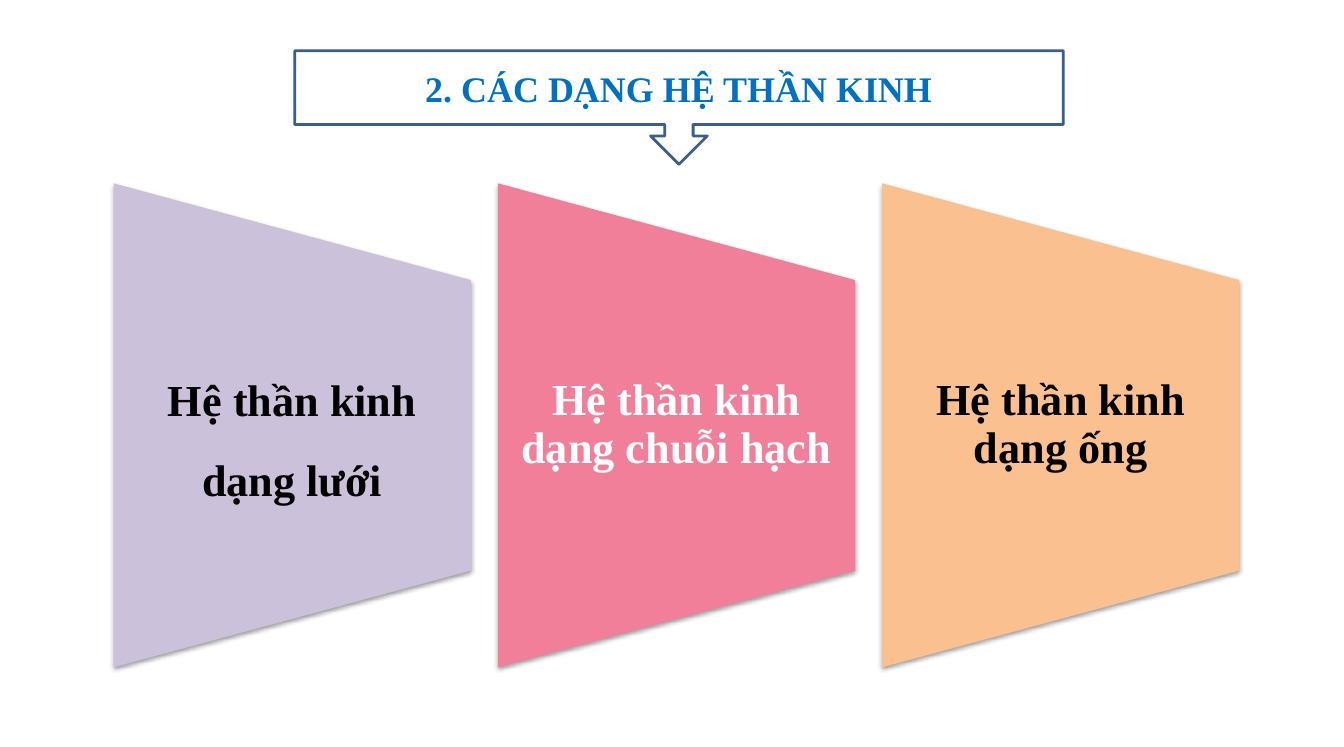
from lxml import etree
from pptx import Presentation
from pptx.dml.color import RGBColor
from pptx.enum.shapes import MSO_SHAPE as SHAPE
from pptx.enum.text import MSO_ANCHOR as ANCHOR, PP_ALIGN as ALIGN
from pptx.oxml import parse_xml
from pptx.util import Inches, Pt

BLACK = RGBColor(0x00, 0x00, 0x00)
WHITE = RGBColor(0xFF, 0xFF, 0xFF)
BLUE = RGBColor(0x00, 0x70, 0xC0)
NAVY = RGBColor(0x3A, 0x5F, 0x8C)
LILAC = RGBColor(0xCC, 0xC1, 0xDA)
PINK = RGBColor(0xF1, 0x7F, 0x99)
PEACH = RGBColor(0xFA, 0xC0, 0x90)

SOFT_SHADOW = (
    '<a:effectLst xmlns:a="http://schemas.openxmlformats.org/drawingml/2006/main">'
    '<a:outerShdw blurRad="40000" dist="20000" dir="5400000" rotWithShape="0">'
    '<a:srgbClr val="000000"><a:alpha val="38000"/></a:srgbClr>'
    '</a:outerShdw></a:effectLst>'
)


def set_text(shape, text, size, color, spacing=1.0, inset=0.1):
    tf = shape.text_frame
    tf.word_wrap = True
    tf.vertical_anchor = ANCHOR.MIDDLE
    tf.margin_left = tf.margin_right = Inches(inset)
    tf.margin_top = tf.margin_bottom = 0
    p = tf.paragraphs[0]
    p.alignment = ALIGN.CENTER
    p.line_spacing = spacing
    r = p.add_run()
    r.text = text
    r.font.name = "Times New Roman"
    r.font.size = Pt(size)
    r.font.bold = True
    r.font.color.rgb = color


prs = Presentation()
prs.slide_width = Inches(13.5)
prs.slide_height = Inches(7.5)
s = prs.slides.add_slide(prs.slide_layouts[6])

# Title callout
title = s.shapes.add_shape(SHAPE.DOWN_ARROW_CALLOUT, Inches(2.96), Inches(0.51),
                           Inches(7.72), Inches(1.14))
title.shadow.inherit = False
title.fill.solid()
title.fill.fore_color.rgb = WHITE
title.line.color.rgb = NAVY
title.line.width = Pt(2)
set_text(title, "2. CÁC DẠNG HỆ THẦN KINH", 26, BLUE)

# Three panels: trapezoids turned on their side, each under an upright label
PANEL_W, PANEL_H = 3.59, 4.86
LABEL_H = 2.91
LEFT, PITCH, MIDDLE = 1.14, 3.86, 4.27

panels = [
    ("Hệ thần kinh dạng lưới", LILAC, BLACK, 1.5),
    ("Hệ thần kinh dạng chuỗi hạch", PINK, WHITE, 0.9),
    ("Hệ thần kinh dạng ống", PEACH, BLACK, 0.9),
]
for i, (text, fill, color, spacing) in enumerate(panels):
    left = LEFT + i * PITCH
    panel = s.shapes.add_shape(
        SHAPE.FLOWCHART_MANUAL_OPERATION,
        Inches(left + (PANEL_W - PANEL_H) / 2), Inches(MIDDLE - PANEL_W / 2),
        Inches(PANEL_H), Inches(PANEL_W))
    panel.rotation = 270
    panel.fill.solid()
    panel.fill.fore_color.rgb = fill
    panel.line.fill.background()
    panel._element.spPr.append(parse_xml(SOFT_SHADOW))

    label = s.shapes.add_textbox(Inches(left), Inches(MIDDLE - LABEL_H / 2),
                                 Inches(PANEL_W), Inches(LABEL_H))
    set_text(label, text, 32, color, spacing=spacing, inset=0.22)

prs.save("out.pptx")
